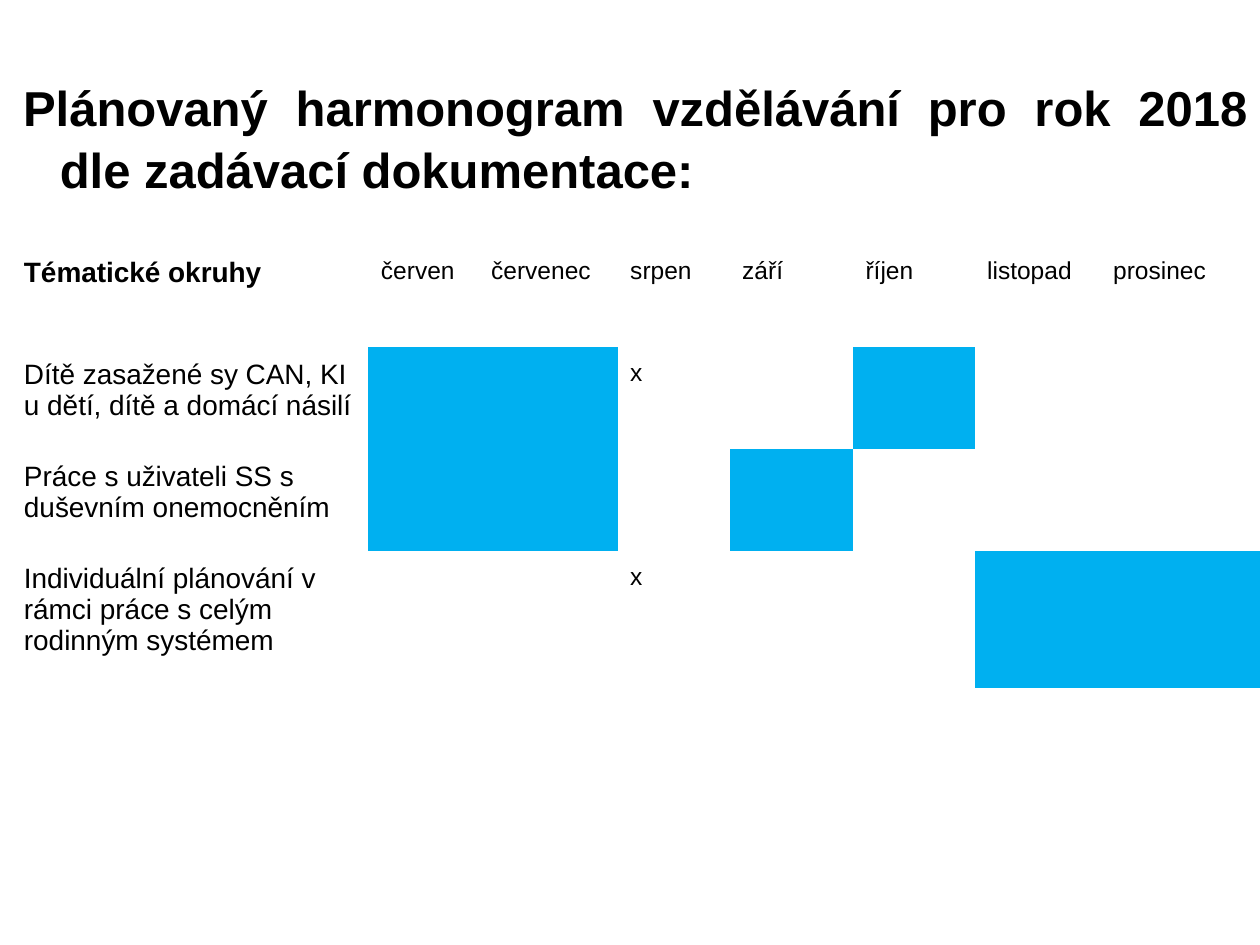
from lxml import etree
from pptx import Presentation
from pptx.dml.color import RGBColor
from pptx.enum.text import MSO_ANCHOR, PP_ALIGN
from pptx.oxml.ns import qn
from pptx.util import Pt

JUSTIFY, MIDDLE, TOP = PP_ALIGN.JUSTIFY, MSO_ANCHOR.MIDDLE, MSO_ANCHOR.TOP
FONT, INK, BAR = "Arial", "000000", "00B0F0"
NO_STYLE = "{2D5ABB26-0587-4C30-8999-92F81FD0307C}"
INSET = 7.2

TITLE = "Plánovaný harmonogram vzdělávání pro rok 2018 dle zadávací dokumentace:"
HEADING = "Tématické okruhy"
MONTHS = ["červen", "červenec", "srpen", "září", "říjen", "listopad", "prosinec"]
TOPICS = [
    ("Dítě zasažené sy CAN, KI u dětí, dítě a domácí násilí",
     ["červen", "červenec", "říjen"], ["srpen"]),
    ("Práce s uživateli SS s duševním onemocněním",
     ["červen", "červenec", "září"], []),
    ("Individuální plánování v rámci práce s celým rodinným systémem",
     ["listopad", "prosinec"], ["srpen"]),
]
COL_WIDTHS = [204, 63, 79.5, 64, 70.5, 69.5, 72, 91]
ROW_HEIGHTS = [58.3, 58.3, 58.3, 78.3]


def color(value):
    return RGBColor.from_string(value)


def set_insets(obj):
    for side in ("left", "right", "top", "bottom"):
        setattr(obj, f"margin_{side}", Pt(INSET))


def style(p, size, bold=False):
    for r in p.runs:
        r.font.name = FONT
        r.font.size = Pt(size)
        r.font.bold = bold
        r.font.color.rgb = color(INK)


def add_title(s):
    sp = s.shapes.title
    sp.left, sp.top, sp.width, sp.height = Pt(0), Pt(16), Pt(720), Pt(124)
    tf = sp.text_frame
    tf.text = TITLE
    tf.word_wrap = True
    tf.vertical_anchor = MIDDLE
    set_insets(tf)
    p = tf.paragraphs[0]
    p.alignment = JUSTIFY
    p.line_spacing = 1.05
    pPr = p._p.get_or_add_pPr()
    pPr.set("marL", str(Pt(27)))
    pPr.set("indent", str(Pt(-21)))
    style(p, 28, True)


def fill_cell(cell, text, size, bold=False, bar=False):
    set_insets(cell)
    cell.vertical_anchor = TOP
    if bar:
        cell.fill.solid()
        cell.fill.fore_color.rgb = color(BAR)
    else:
        cell.fill.background()
    if text:
        cell.text_frame.text = text
        style(cell.text_frame.paragraphs[0], size, bold)


def add_schedule(s):
    frame = s.shapes.add_table(len(ROW_HEIGHTS), len(COL_WIDTHS), Pt(6.5), Pt(140),
                               Pt(sum(COL_WIDTHS)), Pt(sum(ROW_HEIGHTS)))
    table = frame.table
    table.first_row = table.horz_banding = False
    tblPr = table._tbl.tblPr
    style_id = tblPr.find(qn("a:tableStyleId"))
    if style_id is None:
        style_id = etree.SubElement(tblPr, qn("a:tableStyleId"))
    style_id.text = NO_STYLE
    for col, width in zip(table.columns, COL_WIDTHS):
        col.width = Pt(width)
    for row, height in zip(table.rows, ROW_HEIGHTS):
        row.height = Pt(height)

    fill_cell(table.cell(0, 0), HEADING, 16, bold=True)
    for c, month in enumerate(MONTHS, 1):
        fill_cell(table.cell(0, c), month, 14)
    for r, (topic, planned, breaks) in enumerate(TOPICS, 1):
        fill_cell(table.cell(r, 0), topic, 16)
        for c, month in enumerate(MONTHS, 1):
            mark = "x" if month in breaks else ""
            fill_cell(table.cell(r, c), mark, 14, bar=month in planned)


def main():
    prs = Presentation()
    prs.slide_width, prs.slide_height = Pt(720), Pt(540)
    s = prs.slides.add_slide(prs.slide_layouts[5])
    add_title(s)
    add_schedule(s)
    prs.save("out.pptx")


if __name__ == "__main__":
    main()
